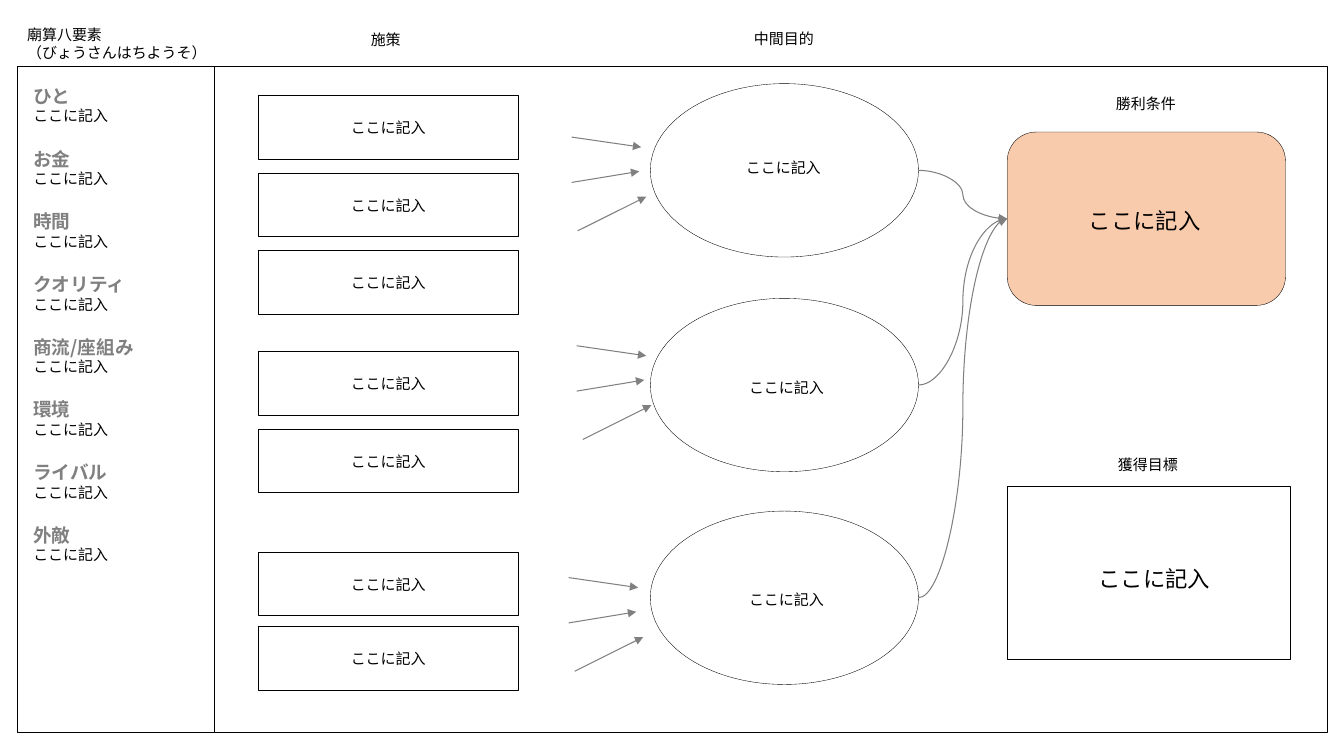
from dataclasses import dataclass

from lxml import etree
from pptx import Presentation
from pptx.dml.color import RGBColor
from pptx.enum.shapes import MSO_CONNECTOR, MSO_SHAPE
from pptx.enum.text import MSO_ANCHOR, MSO_AUTO_SIZE, PP_ALIGN
from pptx.oxml.ns import qn
from pptx.util import Pt

RECT, ROUNDED, OVAL = MSO_SHAPE.RECTANGLE, MSO_SHAPE.ROUNDED_RECTANGLE, MSO_SHAPE.OVAL
STRAIGHT, CURVE = MSO_CONNECTOR.STRAIGHT, MSO_CONNECTOR.CURVE
LEFT, CENTER = PP_ALIGN.LEFT, PP_ALIGN.CENTER
TOP, MIDDLE = MSO_ANCHOR.TOP, MSO_ANCHOR.MIDDLE
NO_FIT = MSO_AUTO_SIZE.NONE

PX = 9144  # 100 px to the inch
LINE_RATIO = 1.2
PROMPT = "ここに記入"
FACTORS = ("ひと", "お金", "時間", "クオリティ", "商流/座組み", "環境", "ライバル", "外敵")


@dataclass(frozen=True)
class Theme:
    font: str = "Noto Sans CJK JP"
    ink: str = "000000"
    muted: str = "808080"
    paper: str = "FFFFFF"
    victory: str = "F8CBAD"
    small: float = 10.7
    heading: float = 13.3
    large: float = 16
    thin: float = 0.25
    normal: float = 0.75


THEME = Theme()


def px(*lengths):
    return [round(length * PX) for length in lengths]


def add_run(paragraph, text, size, color=THEME.ink, bold=False):
    run = paragraph.add_run()
    run.text = text
    font = run.font
    font.size, font.bold, font.name = Pt(size), bold, THEME.font
    font.color.rgb = RGBColor.from_string(color)
    etree.SubElement(font._element, qn("a:ea"), typeface=THEME.font)


def set_frame(frame, inset_x, inset_y, anchor=MIDDLE, wrap=True):
    frame.word_wrap, frame.auto_size, frame.vertical_anchor = wrap, NO_FIT, anchor
    frame.margin_left, frame.margin_right = px(inset_x, inset_x)
    frame.margin_top, frame.margin_bottom = px(inset_y, inset_y)


def add_prompt(shape, size=THEME.small):
    frame = shape.text_frame
    set_frame(frame, 13, 13)
    frame.paragraphs[0].alignment = CENTER
    add_run(frame.paragraphs[0], PROMPT, size)


def add_outline(slide, kind, box, width, fill=None):
    shape = slide.shapes.add_shape(kind, *px(*box))
    shape.shadow.inherit = False
    if fill:
        shape.fill.solid()
        shape.fill.fore_color.rgb = RGBColor.from_string(fill)
    else:
        shape.fill.background()
    shape.line.color.rgb = RGBColor.from_string(THEME.ink)
    shape.line.width = Pt(width)
    return shape


def add_label(slide, text, box):
    frame = slide.shapes.add_textbox(*px(*box)).text_frame
    set_frame(frame, 10, 5, wrap=False)
    add_run(frame.paragraphs[0], text, THEME.small)


def add_arrow(slide, kind, start, end):
    arrow = slide.shapes.add_connector(kind, *px(*start, *end))
    arrow.line.color.rgb = RGBColor.from_string(THEME.muted)
    arrow.line.width = Pt(THEME.normal)
    etree.SubElement(arrow.line._get_or_add_ln(), qn("a:tailEnd"), type="triangle")
    etree.SubElement(arrow._element.spPr, qn("a:effectLst"))


def place(slide, placeholder, box):
    """Position a placeholder and bring it in front of the panels."""
    placeholder.left, placeholder.top, placeholder.width, placeholder.height = px(*box)
    slide.shapes._spTree.append(placeholder._element)
    return placeholder.text_frame


def add_line(frame, index, text, size, space=0, **style):
    paragraph = frame.paragraphs[0] if index == 0 else frame.add_paragraph()
    properties = paragraph._p.get_or_add_pPr()
    properties.set("marL", "0")
    properties.set("indent", "0")
    etree.SubElement(properties, qn("a:buNone"))
    paragraph.alignment = LEFT
    paragraph.line_spacing = Pt(round(size * LINE_RATIO, 1))
    paragraph.space_before, paragraph.space_after = Pt(space), Pt(0)
    add_run(paragraph, text, size, **style)


def build_factors(slide, box):
    """Left column: heading above the panel and the eight factors in it."""
    left, top, width, height = box
    add_outline(slide, RECT, box, THEME.normal, THEME.paper)

    title = place(slide, slide.shapes.title, (left, top - 46, 199, 46))
    set_frame(title, 10, 5, TOP, wrap=False)
    for index, text in enumerate(("廟算八要素", "（びょうさんはちようそ）")):
        add_line(title, index, text, THEME.small)

    factors = place(slide, slide.placeholders[1], (left + 3, top + 5, width - 9, height - 28))
    set_frame(factors, 13, 13, TOP)
    for index, factor in enumerate(FACTORS):
        gap = 16 if index else 0
        add_line(factors, index, factor, THEME.heading, gap, color=THEME.muted, bold=True)
        add_line(factors, index + 1, PROMPT, THEME.small)


def build_measures(slide, box):
    """Measures: boxes stacked in three groups."""
    left, top, width, height = box
    add_label(slide, "施策", (left + 102, top - 70, 50, 28))
    for offset, count, pitch in ((0, 3, 77), (254, 2, 77), (453, 2, 74)):
        for row in range(count):
            measure = add_outline(slide, RECT, (left, top + offset + row * pitch, width, height),
                                  THEME.normal)
            add_prompt(measure)


def build_arrow_fans(slide, origins):
    """Three arrows leading from each group of measures to its goal."""
    fan = (((0, 0), (69, 10)), ((0, 45), (67, 34)), ((6, 93), (74, 59)))
    for left, top in origins:
        for start, end in fan:
            add_arrow(slide, STRAIGHT, (left + start[0], top + start[1]),
                      (left + end[0], top + end[1]))


def build_goals(slide, box, victory_side):
    """Intermediate goals: ovals, each with a curve to the victory condition."""
    left, top, width, height = box
    add_label(slide, "中間目的", (left + 93, top - 59, 80, 28))
    for offset, text_x, text_y in ((0, 22, 27), (213, 25, 32), (424, 25, 31)):
        goal_top = top + offset
        add_outline(slide, OVAL, (left, goal_top, width, height), THEME.thin)
        add_arrow(slide, CURVE, (left + width, goal_top + height // 2), victory_side)
        add_prompt(slide.shapes.add_textbox(*px(left + text_x, goal_top + text_y, 220, 113)))


def build_outcome(slide, box, label, label_x, kind, fill, prompt_box):
    """Outcome: label above a large outlined box."""
    left, top, width, height = box
    add_label(slide, label, (left + label_x, top - 35 if fill is None else top - 42, 80, 28))
    add_outline(slide, kind, box, THEME.thin, fill)
    text_x, text_y, text_width, text_height = prompt_box
    prompt = slide.shapes.add_textbox(*px(left + text_x, top + text_y, text_width, text_height))
    add_prompt(prompt, THEME.large)


def main():
    presentation = Presentation()
    presentation.slide_width, presentation.slide_height = px(1333, 750)
    slide = presentation.slides.add_slide(presentation.slide_layouts[1])

    build_factors(slide, (17, 66, 196, 661))
    add_outline(slide, RECT, (213, 66, 1104, 661), THEME.normal, THEME.paper)
    build_measures(slide, (256, 95, 258, 63))
    build_arrow_fans(slide, ((567, 136), (572, 343), (564, 573)))
    build_goals(slide, (645, 83, 266, 172), (999, 217))
    build_outcome(slide, (999, 131, 276, 172), "勝利条件", 98, ROUNDED, THEME.victory,
                  (17, 39, 239, 97))
    build_outcome(slide, (999, 482, 281, 172), "獲得目標", 100, RECT, None,
                  (36, 43, 220, 97))
    presentation.save("out.pptx")


if __name__ == "__main__":
    main()
